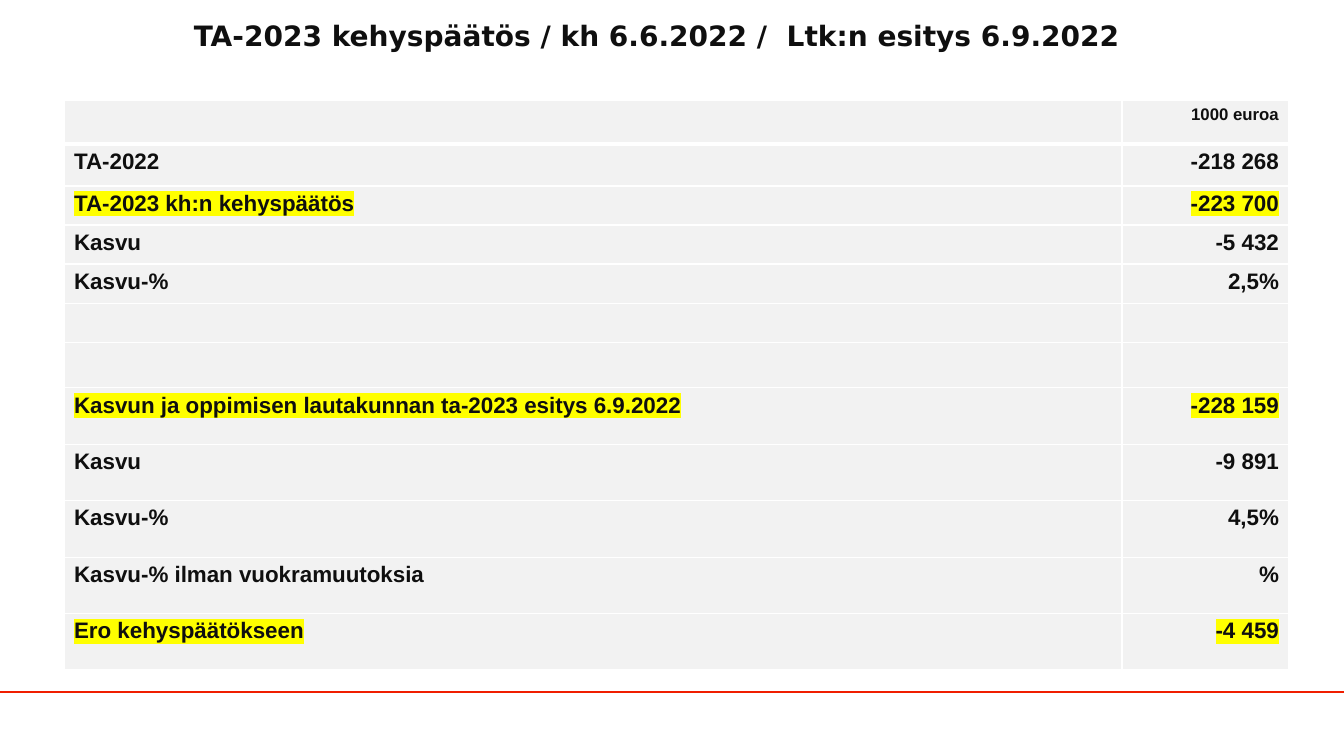
"""Build the 2023 budget framework slide with its comparison table."""
from lxml import etree
from pptx import Presentation
from pptx.dml.color import RGBColor
from pptx.enum.shapes import MSO_CONNECTOR
from pptx.enum.text import PP_ALIGN
from pptx.oxml.ns import qn
from pptx.util import Pt

STRAIGHT = MSO_CONNECTOR.STRAIGHT
LEFT, CENTER, RIGHT = PP_ALIGN.LEFT, PP_ALIGN.CENTER, PP_ALIGN.RIGHT
COLORS = {"text": "0F0F0F", "cell": "F2F2F2", "border": "FFFFFF", "mark": "FFFF00", "rule": "F01E00"}

TITLE = "TA-2023 kehyspäätös / kh 6.6.2022 /  Ltk:n esitys 6.9.2022"
# (label, amount, row height, highlighted)
ROWS = [
    ("", "1000 euroa", 44, False),
    ("TA-2022", "-218 268", 42, False),
    ("TA-2023 kh:n kehyspäätös", "-223 700", 39, True),
    ("Kasvu", "-5 432", 39, False),
    ("Kasvu-%", "2,5%", 40, False),
    ("", "", 39, False),
    ("", "", 45, False),
    ("Kasvun ja oppimisen lautakunnan ta-2023 esitys 6.9.2022", "-228 159", 57, True),
    ("Kasvu", "-9 891", 56, False),
    ("Kasvu-%", "4,5%", 57, False),
    ("Kasvu-% ilman vuokramuutoksia", "%", 56, False),
    ("Ero kehyspäätökseen", "-4 459", 56, True),
]
COLUMN_WIDTHS = [1058, 167]
SCALE = 914400 / 100.8


def px(length):
    return round(length * SCALE)


def color(name):
    return RGBColor.from_string(COLORS[name])


def add_solid(parent, tag, name):
    element = etree.SubElement(parent, qn(tag))
    etree.SubElement(element, qn("a:srgbClr"), val=COLORS[name])


def write(para, text, size, face, align, marked=False):
    para.alignment = align
    font = para.font
    font.size, font.name, font.bold = Pt(size), face, True
    font.color.rgb = color("text")
    if text:
        span = para.add_run()
        span.text = text
        if marked:
            add_solid(span.font._element, "a:highlight", "mark")


def style_cell(cell, top, bottom):
    properties = cell._tc.get_or_add_tcPr()
    for side, width in (("L", 1), ("R", 1), ("T", top), ("B", bottom)):
        border = etree.SubElement(properties, qn(f"a:ln{side}"), w=str(Pt(width)))
        add_solid(border, "a:solidFill", "border")
    cell.fill.solid()
    cell.fill.fore_color.rgb = color("cell")


def add_budget_table(page):
    heights = [row[2] for row in ROWS]
    frame = page.shapes.add_table(len(ROWS), len(COLUMN_WIDTHS), px(64), px(100),
                                  px(sum(COLUMN_WIDTHS)), px(sum(heights)))
    table = frame.table
    for column, width in zip(table.columns, COLUMN_WIDTHS):
        column.width = px(width)
    for index, (label, amount, height, marked) in enumerate(ROWS):
        table.rows[index].height = px(height)
        top, bottom = (3 if index == 1 else 1), (3 if index == 0 else 1)
        size = 12 if index == 0 else 16
        for place, (text, align) in enumerate(((label, LEFT), (amount, RIGHT))):
            cell = table.cell(index, place)
            style_cell(cell, top, bottom)
            write(cell.text_frame.paragraphs[0], text, size, "Arial", align, marked)


def main():
    deck = Presentation()
    deck.slide_width, deck.slide_height = px(1344), px(756)
    page = deck.slides.add_slide(deck.slide_layouts[6])

    rule = page.shapes.add_connector(STRAIGHT, 0, px(692), px(1344), px(692))
    rule.line.color.rgb = color("rule")
    rule.line.width = Pt(2)
    etree.SubElement(rule._element.spPr, qn("a:effectLst"))

    box = page.shapes.add_textbox(0, px(14), px(1314), px(64))
    box.text_frame.word_wrap = True
    write(box.text_frame.paragraphs[0], TITLE, 20, "DejaVu Sans", CENTER)

    add_budget_table(page)
    deck.save("out.pptx")


if __name__ == "__main__":
    main()
